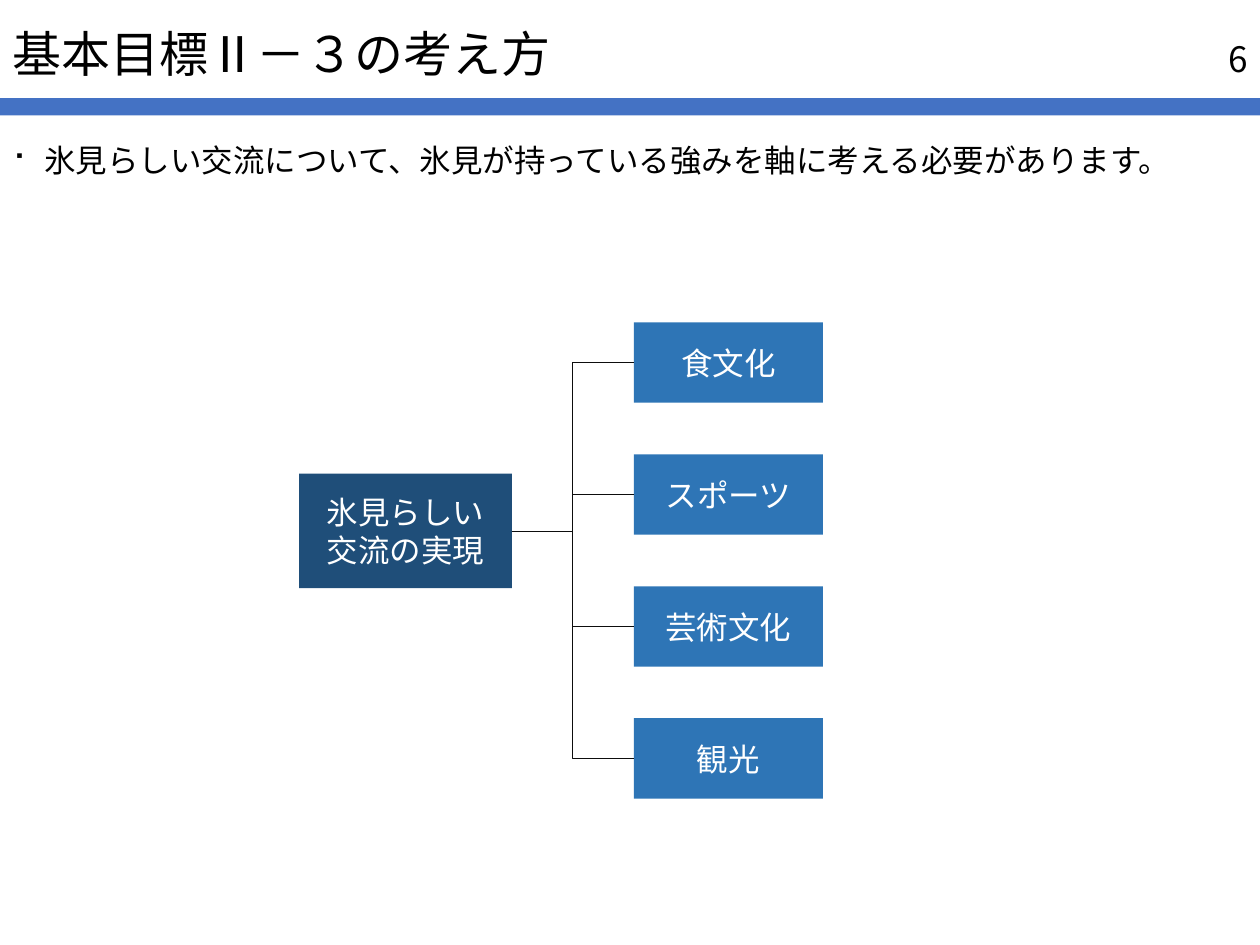
from lxml.etree import SubElement
from pptx import Presentation
from pptx.dml.color import RGBColor as Rgb
from pptx.enum.shapes import MSO_CONNECTOR as Link, MSO_SHAPE as Shape
from pptx.enum.text import MSO_ANCHOR as Anchor, PP_ALIGN as Align
from pptx.oxml.ns import qn
from pptx.util import Cm, Pt

# Content
TITLE = "基本目標Ⅱ－３の考え方"
PAGE_NUMBER = "6"
MESSAGE = "氷見らしい交流について、氷見が持っている強みを軸に考える必要があります。"
GOAL = "氷見らしい交流の実現"
STRENGTHS = ["食文化", "スポーツ", "芸術文化", "観光"]

THEME = {
    "font": "Noto Sans CJK JP",
    "text": "000000", "light": "FFFFFF", "rule": "4472C4",
    "goal": "1F4E79", "strength": "2E75B6", "link": "0D0D0D",
    "title_size": 28, "number_size": 20, "body_size": 18,
}

# Layout in centimetres: left, top, width, height
PAGE_WIDTH, PAGE_HEIGHT = 25.4, 19.05
TITLE_AREA = (0, 0.78, PAGE_WIDTH, 0.74)
RULE_AREA = (0, 1.98, PAGE_WIDTH, 0.35)
NUMBER_AREA = (19.69, 0.66, 5.71, 1.02)
MESSAGE_AREA = (0, 2.8, PAGE_WIDTH, 1.98)
GOAL_AREA = (6.03, 9.55, 4.29, 2.31)
FIRST_STRENGTH = (12.78, 6.5, 3.81, 1.62)
STRENGTH_STEP = 2.66
BULLET_INDENT = 0.64


def write(box, text, size, color="text", align=Align.LEFT, anchor=Anchor.MIDDLE,
          line_spacing=None, space_before=None, bullet=None):
    frame = box.text_frame
    frame.word_wrap = True
    frame.vertical_anchor = anchor
    para = frame.paragraphs[0]
    para.alignment = align
    if line_spacing:
        para.line_spacing = line_spacing
    if space_before:
        para.space_before = Pt(space_before)
    if bullet:
        properties = para._p.get_or_add_pPr()
        properties.set("marL", str(Cm(BULLET_INDENT)))
        properties.set("indent", str(-Cm(BULLET_INDENT)))
        SubElement(properties, qn("a:buFont")).set("typeface", "Wingdings")
        SubElement(properties, qn("a:buChar")).set("char", bullet)
    span = para.add_run()
    span.text = text
    font = span.font
    font.size = Pt(THEME[size])
    font.name = THEME["font"]
    font.color.rgb = Rgb.from_string(THEME[color])
    SubElement(font._element, qn("a:ea")).set("typeface", THEME["font"])


def add_text(page, area, text, size, **style):
    write(page.shapes.add_textbox(*map(Cm, area)), text, size, **style)


def add_box(page, area, fill, text=None):
    box = page.shapes.add_shape(Shape.RECTANGLE, *map(Cm, area))
    box.shadow.inherit = False
    box.fill.solid()
    box.fill.fore_color.rgb = Rgb.from_string(THEME[fill])
    box.line.fill.background()
    if text:
        write(box, text, "body_size", color="light", align=Align.CENTER)
    return box


def add_link(page, start, end):
    link = page.shapes.add_connector(Link.ELBOW, 0, 0, 0, 0)
    link.begin_connect(start, 3)
    link.end_connect(end, 1)
    link.line.color.rgb = Rgb.from_string(THEME["link"])
    link.line.width = Pt(0.5)
    SubElement(link._element.spPr, qn("a:effectLst"))


def main():
    deck = Presentation()
    deck.slide_width, deck.slide_height = Cm(PAGE_WIDTH), Cm(PAGE_HEIGHT)
    page = deck.slides.add_slide(deck.slide_layouts[6])

    # Heading and message
    add_box(page, RULE_AREA, "rule")
    add_text(page, TITLE_AREA, TITLE, "title_size", line_spacing=0.9)
    add_text(page, MESSAGE_AREA, MESSAGE, "body_size", anchor=Anchor.TOP,
             line_spacing=0.9, space_before=10, bullet="■")
    add_text(page, NUMBER_AREA, PAGE_NUMBER, "number_size", align=Align.RIGHT)

    # Goal on the left, one branch per strength on the right
    goal = add_box(page, GOAL_AREA, "goal", GOAL)
    left, top, width, height = FIRST_STRENGTH
    for row, name in enumerate(STRENGTHS):
        area = (left, top + row * STRENGTH_STEP, width, height)
        add_link(page, goal, add_box(page, area, "strength", name))

    deck.save("out.pptx")


if __name__ == "__main__":
    main()
